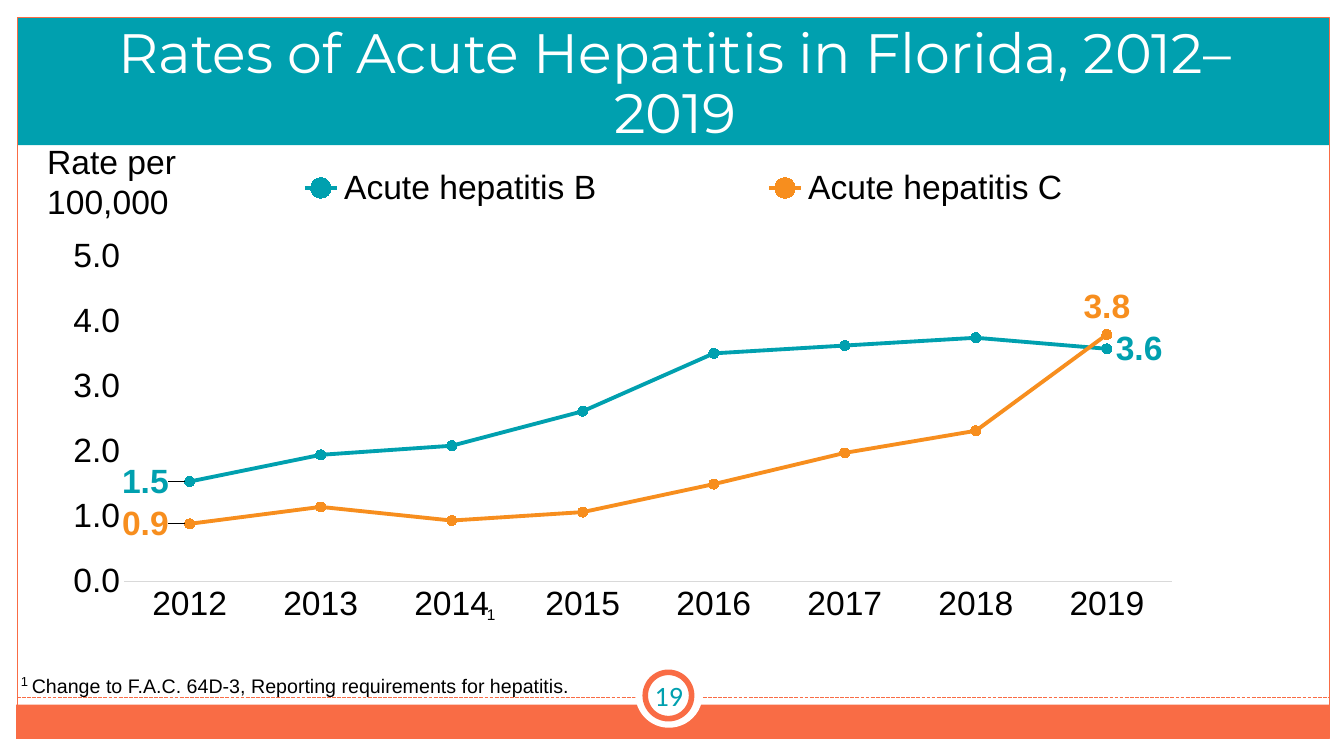
from lxml.etree import SubElement
from pptx import Presentation
from pptx.chart.data import CategoryChartData as ChartData
from pptx.dml.color import RGBColor
from pptx.enum.chart import XL_CHART_TYPE as ChartType, XL_LABEL_POSITION as LabelPosition
from pptx.enum.chart import XL_LEGEND_POSITION as LegendPosition, XL_MARKER_STYLE as Marker
from pptx.enum.chart import XL_TICK_MARK as TickMark
from pptx.enum.dml import MSO_LINE as Dash
from pptx.enum.shapes import MSO_CONNECTOR as Connector, MSO_SHAPE as Shape
from pptx.enum.text import MSO_ANCHOR as Anchor, PP_ALIGN as Align
from pptx.oxml import parse_xml
from pptx.oxml.ns import nsdecls, qn
from pptx.util import Pt

EMU_PER_PX = 9144  # 100 px to the inch
TEAL, ORANGE, CORAL = "00A0AF", "F78E1E", "F96C45"
WHITE, BLACK, GREY = "FFFFFF", "000000", "D9D9D9"

YEARS = [str(year) for year in range(2012, 2020)]
# name, colour, rates, position and sideways shift of the first and last labels
SERIES = [
    ("Acute hepatitis B", TEAL, [1.53, 1.94, 2.08, 2.61, 3.5, 3.62, 3.74, 3.57],
     {0: (LabelPosition.LEFT, -0.01), 7: (LabelPosition.RIGHT, 0)}),
    ("Acute hepatitis C", ORANGE, [0.88, 1.14, 0.93, 1.06, 1.49, 1.97, 2.31, 3.79],
     {0: (LabelPosition.LEFT, -0.01), 7: (LabelPosition.ABOVE, 0)}),
]


def px(*lengths):
    return [length * EMU_PER_PX for length in lengths]


def color(code):
    return RGBColor.from_string(code)


def set_font(font, size, code=BLACK, name="Arial", bold=False):
    font.size, font.name, font.bold = Pt(size), name, bold
    font.color.rgb = color(code)


def add_span(para, text, size=24, code=BLACK, name="Arial", raised=0):
    span = para.add_run()
    span.text = text
    set_font(span.font, size, code, name)
    if raised:
        span.font._element.set("baseline", str(raised * 1000))


def manual_layout(x, y, w=None, h=None, inner=False):
    layout = parse_xml(f"<c:layout {nsdecls('c')}><c:manualLayout/></c:layout>")
    entries = [("layoutTarget", "inner")] if inner else []
    if w:
        entries += [("xMode", "edge"), ("yMode", "edge")]
    entries += [("x", x), ("y", y)]
    if w:
        entries += [("w", w), ("h", h)]
    for tag, value in entries:
        SubElement(layout[0], qn(f"c:{tag}")).set("val", str(value))
    return layout


class Page:
    def __init__(self, deck):
        self.slide = deck.slides.add_slide(deck.slide_layouts[5])
        self.shapes = self.slide.shapes

    def shape(self, kind, *place, fill=None, line=None, weight=0.75):
        shape = self.shapes.add_shape(kind, *px(*place))
        shape.shadow.inherit = False
        if fill:
            shape.fill.solid()
            shape.fill.fore_color.rgb = color(fill)
        else:
            shape.fill.background()
        if line:
            shape.line.color.rgb = color(line)
            shape.line.width = Pt(weight)
        else:
            shape.line.fill.background()

    def dashed_line(self, *ends, code):
        line = self.shapes.add_connector(Connector.STRAIGHT, *px(*ends))
        line.line.color.rgb = color(code)
        line.line.width = Pt(0.9)
        line.line.dash_style = Dash.SQUARE_DOT
        SubElement(line._element.spPr, qn("a:effectLst"))

    def title(self, text, *place):
        title = self.shapes.title
        title.left, title.top, title.width, title.height = px(*place)
        self.shapes._spTree.append(title._element)  # in front of the banner
        frame = title.text_frame
        frame.word_wrap = True
        frame.vertical_anchor = Anchor.MIDDLE
        para = frame.paragraphs[0]
        para.alignment, para.line_spacing = Align.CENTER, 0.9
        add_span(para, text, 39.6, WHITE, "Montserrat")

    def text(self, paras, *place, align=Align.LEFT, anchor=Anchor.TOP):
        """Each paragraph is a list of (text, format) pairs."""
        frame = self.shapes.add_textbox(*px(*place)).text_frame
        frame.word_wrap = True
        frame.vertical_anchor = anchor
        for index, spans in enumerate(paras):
            para = frame.add_paragraph() if index else frame.paragraphs[0]
            para.alignment = align
            for text, style in spans:
                add_span(para, text, **style)

    def line_chart(self, *place):
        data = ChartData(number_format="0.0")
        data.categories = YEARS
        for name, _, rates, _ in SERIES:
            data.add_series(name, rates)
        chart = self.shapes.add_chart(ChartType.LINE_MARKERS, *px(*place), data).chart
        chart.has_title = False
        set_font(chart.font, 24)
        chart._chartSpace.chart.plotArea.insert(
            0, manual_layout(0.074, 0.219, 0.873, 0.638, inner=True))
        for old in chart._chartSpace.chart.plotArea.findall(qn("c:layout"))[1:]:
            chart._chartSpace.chart.plotArea.remove(old)
        self.legend(chart)
        self.axes(chart)
        for series, (_, code, _, labels) in zip(chart.plots[0].series, SERIES):
            self.series(series, code, labels)

    def legend(self, chart):
        chart.has_legend = True
        legend = chart.legend
        legend.position = LegendPosition.BOTTOM
        legend.include_in_layout = False
        set_font(legend.font, 24)
        for old in legend._element.findall(qn("c:layout")):
            legend._element.remove(old)
        legend._element.find(qn("c:legendPos")).addnext(
            manual_layout(0.09, 0.036, 0.9, 0.1))

    def axes(self, chart):
        for axis in (chart.category_axis, chart.value_axis):
            axis.major_tick_mark = axis.minor_tick_mark = TickMark.NONE
            axis.has_major_gridlines = False
            set_font(axis.tick_labels.font, 24)
        chart.category_axis.format.line.color.rgb = color(GREY)
        chart.category_axis.format.line.width = Pt(0.75)
        rates = chart.value_axis
        rates.format.line.fill.background()
        rates.minimum_scale, rates.maximum_scale, rates.major_unit = 0, 5, 1
        rates.tick_labels.number_format = "0.0"
        rates.tick_labels.number_format_is_linked = False

    def series(self, series, code, labels):
        series.smooth = False
        series.format.line.color.rgb = color(code)
        series.format.line.width = Pt(2.75)
        marker = series.marker
        marker.style, marker.size = Marker.CIRCLE, 7
        marker.format.fill.solid()
        marker.format.fill.fore_color.rgb = color(code)
        marker.format.line.color.rgb = color(code)
        series.data_labels.show_value = False
        for index, (position, shift) in labels.items():
            label = series.points[index].data_label
            set_font(label.font, 24, code, bold=True)
            label.position = position
            anchor = label._dLbl.find(qn("c:idx"))
            anchor.addnext(parse_xml(
                f'<c:numFmt {nsdecls("c")} formatCode="0.0" sourceLinked="0"/>'))
            if shift:
                anchor.addnext(manual_layout(shift, 0))
        # Leader lines for the shifted labels
        series.data_labels._element.append(parse_xml(
            f'<c:extLst {nsdecls("c")}><c:ext uri="{{CE6537A1-D6FC-4f65-9D91-7224C49458BB}}" '
            'xmlns:c15="http://schemas.microsoft.com/office/drawing/2012/chart">'
            '<c15:showLeaderLines val="1"/></c:ext></c:extLst>'))


def main():
    deck = Presentation()
    deck.slide_width, deck.slide_height = px(1333, 750)
    page = Page(deck)

    # Banner, footer band and frame
    page.shape(Shape.RECTANGLE, 17, 18, 1302, 126, fill=TEAL)
    page.shape(Shape.RECTANGLE, 16, 699, 1302, 34, fill=CORAL)
    page.shape(Shape.RECTANGLE, 17, 17, 1302, 716, line=CORAL)
    page.dashed_line(17, 692, 1318, 692, code=CORAL)

    # Page number badge
    page.shape(Shape.OVAL, 630, 655, 67, 67, fill=WHITE)
    page.shape(Shape.OVAL, 640, 667, 46, 46, fill=WHITE, line=CORAL, weight=4)
    page.text([[("19", dict(size=20, code=TEAL, name="Calibri"))]],
              621, 666, 85, 48, align=Align.CENTER, anchor=Anchor.MIDDLE)

    # Chart, title and notes
    page.line_chart(35, 143, 1191, 506)
    page.title("Rates of Acute Hepatitis in Florida, 2012–2019", 74, 26, 1191, 118)
    page.text([[("1 ", dict(size=16, raised=30)),
                ("Change to F.A.C. 64D-3, Reporting requirements for hepatitis.",
                 dict(size=14))]], 11, 661, 662, 34)
    page.text([[("Rate per", {})], [("100,000", {})]], 37, 135, 153, 91)
    page.text([[("1", dict(size=11))]], 473, 595, 35, 45)

    deck.save("out.pptx")


if __name__ == "__main__":
    main()
